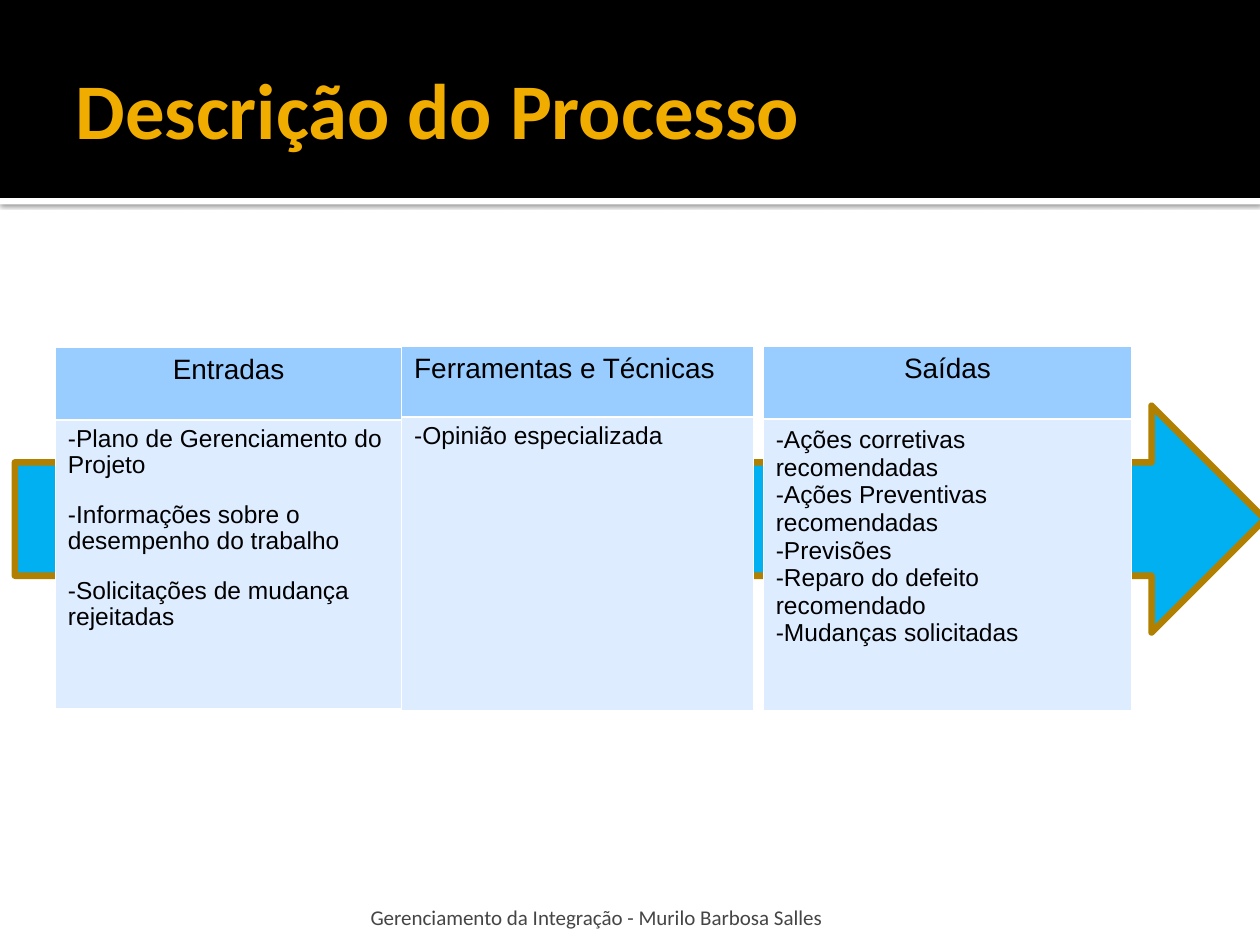
import pptx
import pptx.util
import pptx.oxml
import pptx.oxml.ns
import pptx.dml.color
import pptx.enum.shapes
import pptx.enum.text
from pptx.util import Cm, Pt

COLORS = {
    "black": "000000", "white": "FFFFFF", "title": "F0AD00", "footer": "454545",
    "arrow": "00B0F0", "arrow_line": "B28000", "header": "99CCFF", "body": "DDECFF",
}
ALIGN = pptx.enum.text.PP_ALIGN
ANCHOR = pptx.enum.text.MSO_ANCHOR
SHAPE = pptx.enum.shapes.MSO_SHAPE
NAMESPACE = pptx.oxml.ns.nsdecls("a")


def rgb(name):
    return pptx.dml.color.RGBColor.from_string(COLORS[name])


def write_text(text_frame, text, font="Arial", size=14, color="black", bold=False,
               align=ALIGN.LEFT, line_spacing=1.0, space_after=0):
    """Write one paragraph for each line of text."""
    for index, line in enumerate(text.split("\n")):
        paragraph = text_frame.add_paragraph() if index else text_frame.paragraphs[0]
        paragraph.alignment = align
        paragraph.line_spacing = line_spacing
        paragraph.space_before = Pt(0)
        paragraph.space_after = Pt(space_after)
        run = paragraph.add_run()
        run.text = line
        run.font.name = font
        run.font.size = Pt(size)
        run.font.bold = bold
        run.font.color.rgb = rgb(color)


def set_margins(target, left, top, right, bottom):
    target.margin_left, target.margin_top = Cm(left), Cm(top)
    target.margin_right, target.margin_bottom = Cm(right), Cm(bottom)


class SlideBuilder:
    def __init__(self, slide):
        self.slide = slide

    def shape(self, kind, left, top, width, height, fill, line=None, line_width=0):
        shape = self.slide.shapes.add_shape(kind, Cm(left), Cm(top), Cm(width), Cm(height))
        shape.shadow.inherit = False
        shape.fill.solid()
        shape.fill.fore_color.rgb = rgb(fill)
        if line:
            shape.line.color.rgb = rgb(line)
            shape.line.width = Pt(line_width)
        else:
            shape.line.fill.background()
        return shape

    def drop_shadow(self, shape, blur, distance, opacity):
        effects = shape._element.spPr.find(pptx.oxml.ns.qn("a:effectLst"))
        effects.append(pptx.oxml.parse_xml(
            f'<a:outerShdw {NAMESPACE} blurRad="{Pt(blur)}" dist="{Pt(distance)}" '
            f'dir="5400000" rotWithShape="0"><a:srgbClr val="{COLORS["black"]}">'
            f'<a:alpha val="{opacity * 1000}"/></a:srgbClr></a:outerShdw>'))

    def title(self, text, left, top, width, height):
        title = self.slide.shapes.title
        title.left, title.top = Cm(left), Cm(top)
        title.width, title.height = Cm(width), Cm(height)
        title.text_frame.vertical_anchor = ANCHOR.MIDDLE
        set_margins(title.text_frame, 0.25, 0.13, 0.13, 0.13)
        write_text(title.text_frame, text, font="Calibri", size=45, color="title", bold=True)
        # Bring the title in front of the black band
        title._element.getparent().append(title._element)

    def footer(self, text, left, top, width, height):
        box = self.slide.shapes.add_textbox(Cm(left), Cm(top), Cm(width), Cm(height))
        box.text_frame.word_wrap = True
        box.text_frame.vertical_anchor = ANCHOR.BOTTOM
        set_margins(box.text_frame, 0.13, 0.13, 0.13, 0)
        write_text(box.text_frame, text, font="Calibri", size=12, color="footer")

    def cell_borders(self, cell, **widths):
        properties = cell._tc.get_or_add_tcPr()
        for index, side in enumerate(("lnL", "lnR", "lnT", "lnB")):
            width = Pt(widths.get(side, 0.45))
            properties.insert(index, pptx.oxml.parse_xml(
                f'<a:{side} {NAMESPACE} w="{width}"><a:solidFill>'
                f'<a:srgbClr val="{COLORS["white"]}"/></a:solidFill></a:{side}>'))

    def process_table(self, header, items, left, top, width, row_heights,
                      header_align=ALIGN.CENTER, item_spacing=0.93, item_after=14.2):
        frame = self.slide.shapes.add_table(
            2, 1, Cm(left), Cm(top), Cm(width), Cm(sum(row_heights)))
        table = frame.table
        for row, height in zip(table.rows, row_heights):
            row.height = Cm(height)
        header_cell, body_cell = table.cell(0, 0), table.cell(1, 0)
        for cell, fill, margin_top in ((header_cell, "header", 0.18), (body_cell, "body", 0.15)):
            cell.fill.solid()
            cell.fill.fore_color.rgb = rgb(fill)
            set_margins(cell, 0.25, margin_top, 0.25, 0.13)
        self.cell_borders(header_cell, lnB=1.47)
        self.cell_borders(body_cell, lnT=1.47)
        write_text(header_cell.text_frame, header, size=16, align=header_align,
                   line_spacing=0.93, space_after=14.2)
        write_text(body_cell.text_frame, "\n".join("-" + item for item in items),
                   line_spacing=item_spacing, space_after=item_after)


def main():
    presentation = pptx.Presentation()
    presentation.slide_width, presentation.slide_height = Cm(25.4), Cm(19.05)
    builder = SlideBuilder(presentation.slides.add_slide(presentation.slide_layouts[5]))

    # Title band
    strip = builder.shape(SHAPE.RECTANGLE, 0, 3.99, 25.4, 0.13, "white")
    builder.drop_shadow(strip, blur=2.5, distance=0.8, opacity=60)
    builder.shape(SHAPE.RECTANGLE, 0, 0, 25.4, 3.99, "black")
    builder.title("Descrição do Processo", 1.27, 0.43, 22.86, 3.48)

    # Footer
    builder.footer("Gerenciamento da Integração - Murilo Barbosa Salles",
                   7.34, 17.98, 15.29, 0.76)

    # Process arrow behind the tables
    builder.shape(SHAPE.RIGHT_ARROW, 0.3, 8.18, 25.2, 4.57, "arrow", "arrow_line", 3.78)

    # Inputs, tools and outputs
    builder.process_table(
        "Entradas",
        ["Plano de Gerenciamento do Projeto", "Informações sobre o desempenho do trabalho",
         "Solicitações de mudança rejeitadas"],
        1.12, 7.01, 6.98, (1.45, 5.82))
    builder.process_table(
        "Ferramentas e Técnicas", ["Opinião especializada"],
        8.1, 6.98, 7.09, (1.42, 5.92), header_align=ALIGN.LEFT)
    builder.process_table(
        "Saídas",
        ["Ações corretivas recomendadas", "Ações Preventivas recomendadas", "Previsões",
         "Reparo do defeito recomendado", "Mudanças solicitadas"],
        15.39, 6.98, 7.42, (1.47, 5.87), item_spacing=1.0, item_after=0)

    presentation.save("out.pptx")


if __name__ == "__main__":
    main()
